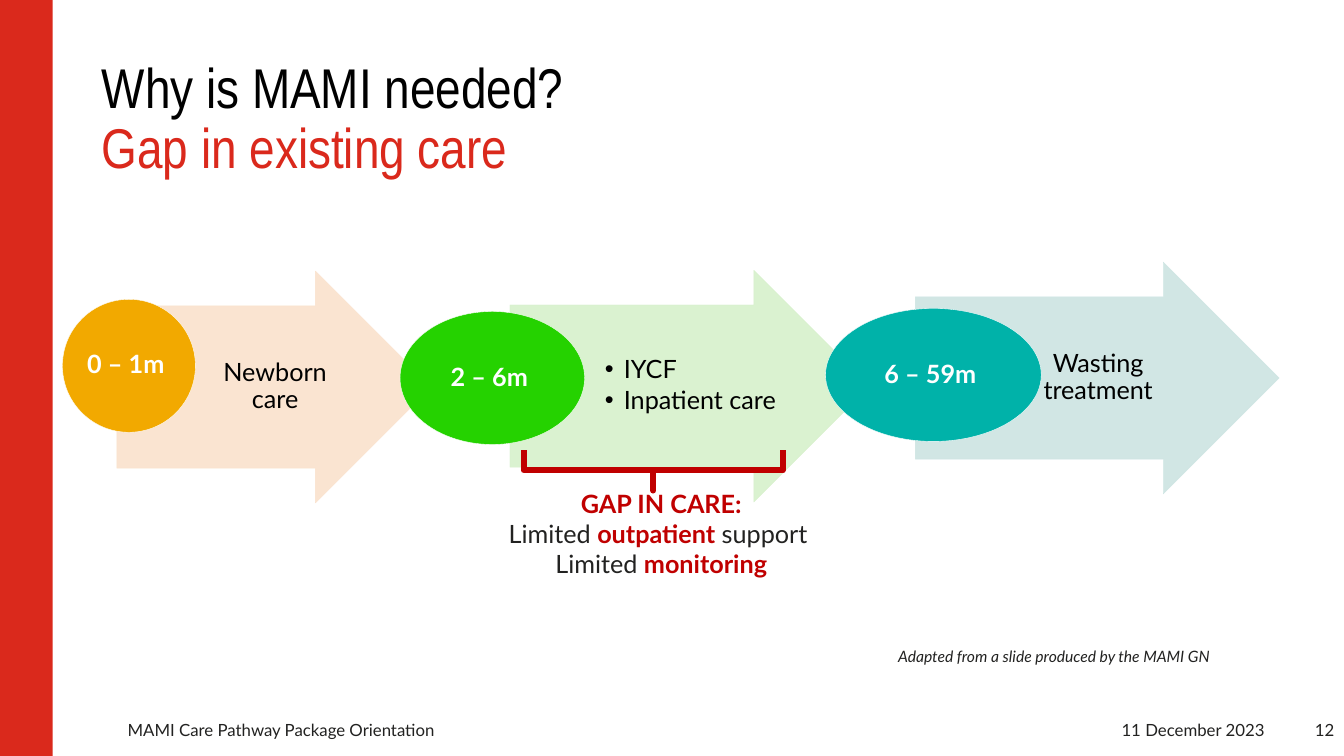
from lxml.etree import SubElement
from pptx import Presentation
from pptx.dml.color import RGBColor
from pptx.enum.shapes import MSO_SHAPE as Preset
from pptx.enum.text import MSO_ANCHOR as Anchor, MSO_AUTO_SIZE as AutoSize, PP_ALIGN as Align
from pptx.oxml.ns import qn
from pptx.util import Pt

RED = RGBColor(0xDA, 0x29, 0x1C)
DARK_RED = RGBColor(0xC0, 0x00, 0x00)
INK = RGBColor(0x22, 0x22, 0x21)
BLACK = RGBColor(0x00, 0x00, 0x00)
WHITE = RGBColor(0xFF, 0xFF, 0xFF)
AMBER = RGBColor(0xF2, 0xA9, 0x00)
PALE_AMBER = RGBColor(0xFA, 0xE2, 0xCC)
GREEN = RGBColor(0x25, 0xD2, 0x00)
PALE_GREEN = RGBColor(0xD7, 0xF1, 0xCB)
TEAL = RGBColor(0x00, 0xB2, 0xA9)
PALE_TEAL = RGBColor(0xCC, 0xE4, 0xE2)

STAGES = [
    ("0 – 1m", ["Newborn care"], AMBER, PALE_AMBER,
     (83.5, 193.7, 224.6, 165.6), (44.6, 213.8, 95, 95)),
    ("2 – 6m", ["IYCF", "Inpatient care"], GREEN, PALE_GREEN,
     (364.3, 193, 257, 165.6), (285.8, 222.5, 131.8, 95)),
    ("6 – 59m", ["Wasting treatment"], TEAL, PALE_TEAL,
     (653.8, 187.2, 259.9, 165.6), (589.7, 220.3, 154.1, 95)),
]


def place(item, box):
    """Move an item to a box given in points."""
    item.left, item.top, item.width, item.height = map(Pt, box)


def style(font, size, color, name="Lato", bold=False, italic=False):
    """Format a font."""
    font.name, font.size, font.bold, font.italic = name, Pt(size), bold, italic
    font.color.rgb = color


def prepare(frame, anchor, insets=(7.2, 3.6, 7.2, 3.6)):
    """Set wrapping, anchor and insets of a text frame."""
    frame.word_wrap = True
    frame.auto_size = AutoSize.NONE
    frame.vertical_anchor = anchor
    (frame.margin_left, frame.margin_top,
     frame.margin_right, frame.margin_bottom) = map(Pt, insets)


def add_shape(slide, preset, box, fill, outline=None):
    """Add a flat preset shape."""
    shape = slide.shapes.add_shape(preset, *map(Pt, box))
    shape.shadow.inherit = False
    shape.fill.solid()
    shape.fill.fore_color.rgb = fill
    if outline is None:
        shape.line.fill.background()
    else:
        shape.line.color.rgb = outline
        shape.line.width = Pt(0.25)
    return shape


def add_note(slide, box, text, size, align=Align.LEFT, insets=(7.2, 3.6, 7.2, 3.6), italic=False):
    """Add a small line of text."""
    frame = slide.shapes.add_textbox(*map(Pt, box)).text_frame
    prepare(frame, Anchor.MIDDLE, insets)
    line = frame.paragraphs[0]
    line.text, line.alignment = text, align
    style(line.font, size, INK, italic=italic)


def add_title(slide, box):
    """Fill the title placeholder with its two coloured lines."""
    title = slide.shapes.title
    place(title, box)
    prepare(title.text_frame, Anchor.MIDDLE)
    heading = title.text_frame.paragraphs[0]
    heading.alignment, heading.line_spacing = Align.LEFT, 0.9
    question = heading.add_run()
    question.text = "Why is MAMI needed? "
    style(question.font, 40, BLACK, "Arial Narrow")
    heading.add_line_break()
    answer = heading.add_run()
    answer.text = "Gap in existing care"
    style(answer.font, 40, RED, "Arial Narrow")


def add_care(slide, arrow, box, services):
    """Write the services inside an arrow, as a list when there are several."""
    left, top, width, height = box
    inner = (left + width / 4, top + 0.15 * height, width / 2, 0.7 * height)
    listed = len(services) > 1
    if listed:
        care = slide.placeholders[1]
        arrow.element.addnext(care.element)
        place(care, inner)
    else:
        care = slide.shapes.add_textbox(*map(Pt, inner))
    frame = care.text_frame
    prepare(frame, Anchor.MIDDLE, (3.6, 0.7, 2.2, 0.7))
    frame.text = "\n".join(services)
    for service in frame.paragraphs:
        service.alignment = Align.LEFT if listed else Align.CENTER
        service.line_spacing = 0.9
        service.space_before = Pt(0)
        service.space_after = Pt(2.7 if listed else 6.3)
        if listed:
            properties = service._p.get_or_add_pPr()
            properties.set("marL", str(Pt(13.5)))
            properties.set("indent", str(Pt(-13.5)))
            SubElement(properties, qn("a:buChar"), char="•")
        style(service.font, 18, BLACK)


def add_stage(slide, age, services, strong, pale, arrow_box, age_box):
    """Draw one age stage: arrow, care text and age bubble."""
    arrow = add_shape(slide, Preset.RIGHT_ARROW, arrow_box, pale, pale)
    arrow.adjustments[0], arrow.adjustments[1] = 0.7, 0.5
    for color in list(arrow.element.spPr.iter(qn("a:srgbClr"))):
        SubElement(color, qn("a:alpha"), val="90000")
    add_care(slide, arrow, arrow_box, services)
    bubble = add_shape(slide, Preset.OVAL, age_box, strong, WHITE)
    prepare(bubble.text_frame, Anchor.MIDDLE, (0.7, 0.7, 0.7, 0.7))
    months = bubble.text_frame.paragraphs[0]
    months.text, months.alignment = age + " ", Align.CENTER
    months.line_spacing, months.space_after = 0.9, Pt(6.3)
    style(months.font, 18, WHITE, bold=True)


def add_gap(slide, box):
    """Describe the gap in care under a brace."""
    left, top, width, height = box
    frame = slide.shapes.add_textbox(*map(Pt, box)).text_frame
    prepare(frame, Anchor.TOP)
    lines = [
        [("GAP IN CARE:", True)],
        [("Limited ", False), ("outpatient", True), (" support ", False)],
        [("Limited ", False), ("monitoring", True)],
    ]
    for index, parts in enumerate(lines):
        line = frame.add_paragraph() if index else frame.paragraphs[0]
        line.alignment = Align.CENTER
        for words, stressed in parts:
            run = line.add_run()
            run.text = words
            style(run.font, 18, DARK_RED if stressed else INK, bold=stressed)
    depth, span = 28.8, 185
    brace_box = (left + width / 2 - depth / 2 - 5.8, top - 9 - span / 2, depth, span)
    brace = slide.shapes.add_shape(Preset.RIGHT_BRACE, *map(Pt, brace_box))
    brace.shadow.inherit = False
    brace.rotation = 90
    brace.adjustments[0], brace.adjustments[1] = 0, 0.5
    brace.fill.background()
    brace.line.color.rgb = DARK_RED
    brace.line.width = Pt(4.5)


def add_footer(slide, box):
    """Place the footer, date and slide number along the bottom."""
    left, top, width, height = box
    add_note(slide, (left, top, 401.8, height),
             "MAMI Care Pathway Package Orientation", 12, Align.CENTER)
    add_note(slide, (left + width - 81.4, top, 81.4, height), "12", 12, Align.RIGHT)
    add_note(slide, (left + width - 166.3, top, 166.3, height), "11 December 2023", 12)


def main():
    """Build the slide and save it."""
    deck = Presentation()
    deck.slide_width, deck.slide_height = Pt(960), Pt(540)
    slide = deck.slides.add_slide(deck.slide_layouts[1])
    add_shape(slide, Preset.RECTANGLE, (0, 0, 37.6, 540), RED)
    add_title(slide, (65.5, 50.4, 750.2, 71.3))
    add_footer(slide, (0, 506.9, 960.3, 28.8))
    for stage in STAGES:
        add_stage(slide, *stage)
    add_gap(slide, (319, 344.9, 306.7, 72.7))
    add_note(slide, (641.5, 462.2, 272.9, 13.7), "Adapted from a slide produced by the MAMI GN",
             11.2, insets=(0, 0, 0, 0), italic=True)
    deck.save("out.pptx")


if __name__ == "__main__":
    main()
